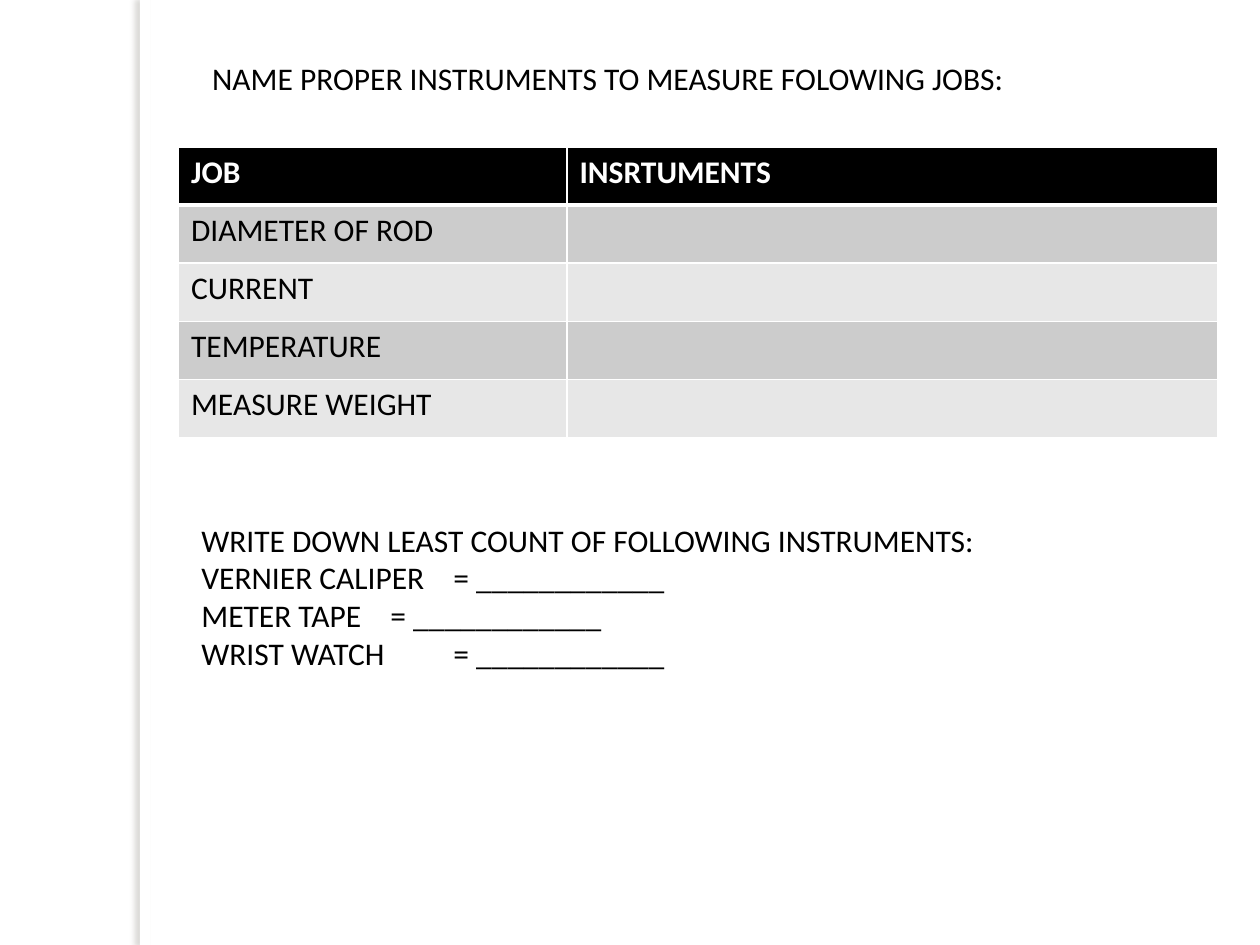
"""Build a worksheet slide on measuring instruments and least counts."""
from lxml import etree
from pptx import Presentation
from pptx.dml import color
from pptx.enum import shapes, text
from pptx.oxml import ns
from pptx.util import Pt


def rgb(value):
    return color.RGBColor.from_string(value)


def add_element(parent, tag, **attributes):
    element = etree.SubElement(parent, ns.qn(tag))
    for name, value in attributes.items():
        element.set(name, str(value))
    return element


class Worksheet:
    font = "Calibri"
    size = 18
    ink = "000000"
    paper = "FFFFFF"
    bands = ("CCCCCC", "E7E7E7")

    def __init__(self, slide):
        self.slide = slide

    def add_text(self, paragraph, words, ink=ink, bold=False):
        paragraph.alignment = text.PP_ALIGN.LEFT
        run = paragraph.add_run()
        run.text = words
        run.font.name = self.font
        run.font.size = Pt(self.size)
        run.font.bold = bold
        run.font.color.rgb = rgb(ink)

    def fill_frame(self, frame, lines):
        frame.word_wrap = True
        frame.auto_size = text.MSO_AUTO_SIZE.SHAPE_TO_FIT_TEXT
        frame.vertical_anchor = text.MSO_ANCHOR.TOP
        for index, line in enumerate(lines):
            paragraph = frame.add_paragraph() if index else frame.paragraphs[0]
            self.add_text(paragraph, line)

    def title(self, words, left, top, width, height):
        shape = self.slide.shapes.title
        shape.left, shape.top = Pt(left), Pt(top)
        shape.width, shape.height = Pt(width), Pt(height)
        self.fill_frame(shape.text_frame, [words])

    def text_box(self, lines, left, top, width, height):
        shape = self.slide.shapes.add_textbox(Pt(left), Pt(top), Pt(width), Pt(height))
        self.fill_frame(shape.text_frame, lines)

    def margin_strip(self, left, top, width, height):
        shape = self.slide.shapes.add_shape(
            shapes.MSO_SHAPE.RECTANGLE, Pt(left), Pt(top), Pt(width), Pt(height))
        shape.fill.solid()
        shape.fill.fore_color.rgb = rgb(self.paper)
        shape.line.fill.background()
        shape.shadow.inherit = False
        effects = shape.element.spPr.find(ns.qn("a:effectLst"))
        shadow = add_element(effects, "a:outerShdw", blurRad=Pt(3), dist=Pt(3),
                             dir=180 * 60000, algn="ctr", rotWithShape=0)
        tint = add_element(shadow, "a:srgbClr", val="736F63")
        add_element(tint, "a:alpha", val=25000)

    def style_cell(self, cell, fill, top, bottom):
        properties = cell._tc.get_or_add_tcPr()
        for side, width in (("L", 1), ("R", 1), ("T", top), ("B", bottom)):
            line = add_element(properties, f"a:ln{side}", w=Pt(width))
            solid = add_element(line, "a:solidFill")
            add_element(solid, "a:srgbClr", val=self.paper)
        cell.fill.solid()
        cell.fill.fore_color.rgb = rgb(fill)

    def table(self, rows, left, top, widths, row_height):
        table = self.slide.shapes.add_table(
            len(rows), len(widths), Pt(left), Pt(top),
            Pt(sum(widths)), Pt(row_height * len(rows))).table
        for column, width in zip(table.columns, widths):
            column.width = Pt(width)
        for row_index, row in enumerate(rows):
            header = row_index == 0
            fill = self.ink if header else self.bands[(row_index - 1) % 2]
            ink = self.paper if header else self.ink
            for column_index, words in enumerate(row):
                cell = table.cell(row_index, column_index)
                self.style_cell(cell, fill, top=3 if row_index == 1 else 1,
                                bottom=3 if header else 1)
                if words:
                    self.add_text(cell.text_frame.paragraphs[0], words, ink, header)


def main():
    presentation = Presentation()
    presentation.slide_width, presentation.slide_height = Pt(720), Pt(540)
    slide = presentation.slides.add_slide(presentation.slide_layouts[5])
    worksheet = Worksheet(slide)
    worksheet.margin_strip(80, 0, 5.75, 540)
    worksheet.title("NAME PROPER INSTRUMENTS TO MEASURE FOLOWING JOBS:", 114, 30, 558, 29)
    jobs = ("DIAMETER OF ROD", "CURRENT", "TEMPERATURE", "MEASURE WEIGHT")
    rows = [("JOB", "INSRTUMENTS")] + [(job, "") for job in jobs]
    worksheet.table(rows, 102, 84, (222, 372), 33.2)
    blank = "= ____________"
    instruments = ("VERNIER CALIPER", "METER TAPE", "WRIST WATCH ")
    worksheet.text_box(
        ["WRITE DOWN LEAST COUNT OF FOLLOWING INSTRUMENTS:"]
        + [f"{instrument}\t{blank}" for instrument in instruments],
        108, 294, 540, 94.5)
    presentation.save("out.pptx")


if __name__ == "__main__":
    main()
